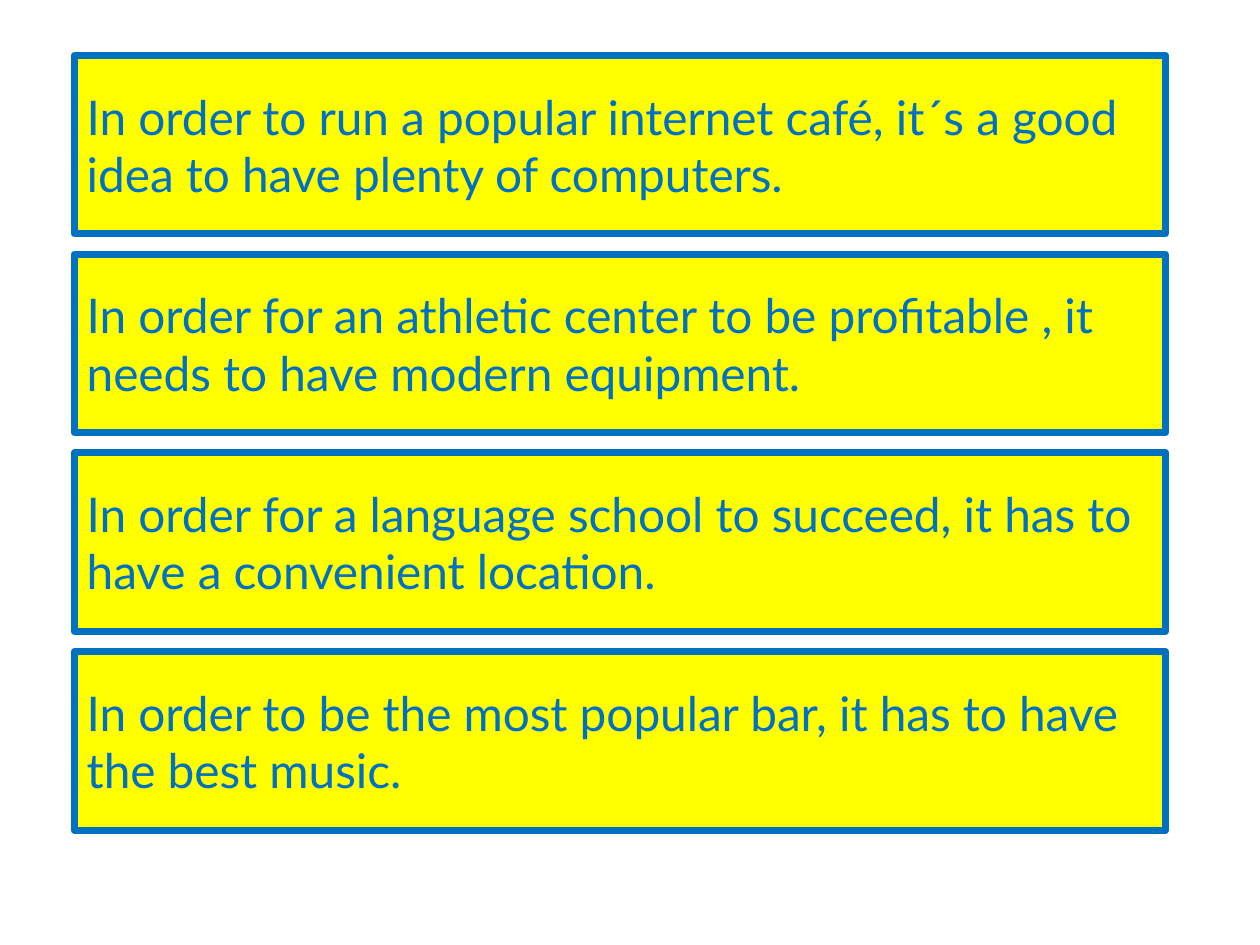
from pptx import Presentation
from pptx import util as u
from pptx.dml.color import RGBColor
from pptx.enum import shapes, text

YELLOW = RGBColor(0xFF, 0xFF, 0x00)
BLUE = RGBColor(0x00, 0x70, 0xC0)
SENTENCES = (
    "In order to run a popular internet café, it´s a good idea to have plenty of computers.",
    "In order for an athletic center to be profitable , it needs to have modern equipment.",
    "In order for a language school to succeed, it has to have a convenient location.",
    "In order to be the most popular bar, it has to have the best music.",
)


def add_sentence(page, sentence, left, top, width, height):
    """Place one outlined sentence box."""
    box = page.shapes.add_shape(shapes.MSO_SHAPE.RECTANGLE, left, top, width, height)
    box.shadow.inherit = False
    box.fill.solid()
    box.fill.fore_color.rgb = YELLOW
    box.line.color.rgb = BLUE
    box.line.width = u.Pt(4)
    frame = box.text_frame
    frame.word_wrap = True
    frame.vertical_anchor = text.MSO_ANCHOR.MIDDLE
    para = frame.paragraphs[0]
    para.alignment = text.PP_ALIGN.LEFT
    span = para.add_run()
    span.text = sentence
    span.font.name = "Lato"
    span.font.size = u.Pt(27.3)
    span.font.color.rgb = BLUE


def add_sentence_stack(page, left, top, width, height, gap):
    """Divide the given box into equal rows, one for each sentence."""
    pitch = (height + gap) / len(SENTENCES)
    for row, sentence in enumerate(SENTENCES):
        add_sentence(page, sentence, left, int(top + row * pitch), width, int(pitch - gap))


def main():
    """Build and save the deck."""
    deck = Presentation()
    deck.slide_width = u.Inches(10)
    deck.slide_height = u.Inches(7.5)
    page = deck.slides.add_slide(deck.slide_layouts.get_by_name("Blank"))
    add_sentence_stack(page, u.Inches(0.59), u.Inches(0.44), u.Inches(8.66),
                       u.Inches(6.15), u.Inches(0.16))
    deck.save("out.pptx")


if __name__ == "__main__":
    main()
